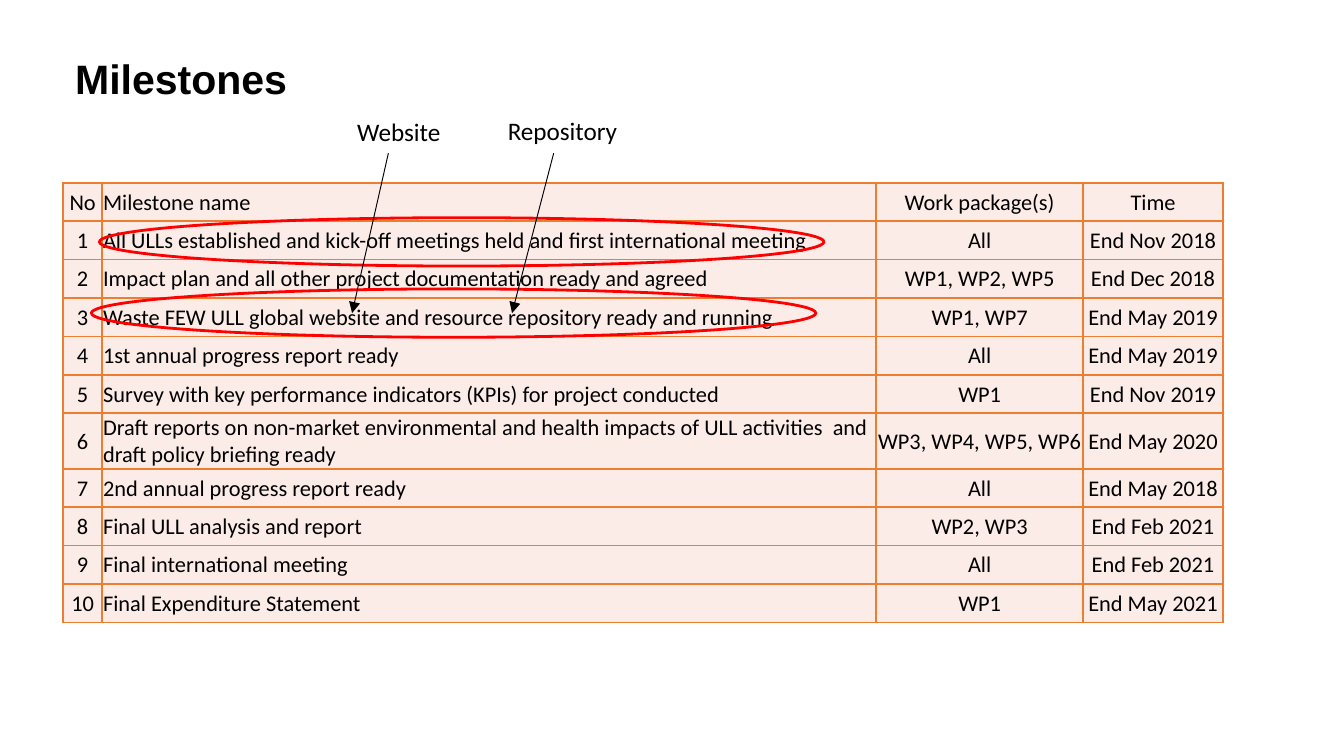
"""Build the Milestones slide: a table of milestones with two marked rows."""
from lxml import etree
from pptx import Presentation
from pptx.dml.color import RGBColor
from pptx.enum.shapes import MSO_CONNECTOR, MSO_SHAPE
from pptx.enum.text import MSO_ANCHOR, MSO_AUTO_SIZE, PP_ALIGN
from pptx.oxml import parse_xml
from pptx.oxml.ns import qn
from pptx.util import Inches, Pt

LEFT, CENTER = PP_ALIGN.LEFT, PP_ALIGN.CENTER
MIDDLE = MSO_ANCHOR.MIDDLE
OVAL = MSO_SHAPE.OVAL
STRAIGHT = MSO_CONNECTOR.STRAIGHT
FIT_SHAPE = MSO_AUTO_SIZE.SHAPE_TO_FIT_TEXT
NS = "http://schemas.openxmlformats.org/drawingml/2006/main"

SLIDE_W = 10
SLIDE_H = SLIDE_W * 9 / 16
COLS = [0.29, 5.76, 1.54, 1.04]
TABLE_X, TABLE_Y, TABLE_H = 0.47, 1.36, 3.27
TALL_ROW, TALL_H = 6, 0.41
ROWS = [
    ("No", "Milestone name", "Work package(s)", "Time"),
    ("1", "All ULLs established and kick-off meetings held and first international meeting", "All", "End Nov 2018"),
    ("2", "Impact plan and all other project documentation ready and agreed", "WP1, WP2, WP5", "End Dec 2018"),
    ("3", "Waste FEW ULL global website and resource repository ready and running", "WP1, WP7", "End May 2019"),
    ("4", "1st annual progress report ready", "All", "End May 2019"),
    ("5", "Survey with key performance indicators (KPIs) for project conducted", "WP1", "End Nov 2019"),
    ("6", "Draft reports on non-market environmental and health impacts of ULL activities  and draft policy briefing ready",
     "WP3, WP4, WP5, WP6", "End May 2020"),
    ("7", "2nd annual progress report ready", "All", "End May 2018"),
    ("8", "Final ULL analysis and report", "WP2, WP3", "End Feb 2021"),
    ("9", "Final international meeting", "All", "End Feb 2021"),
    ("10", "Final Expenditure Statement", "WP1", "End May 2021"),
]
ROW_H = (TABLE_H - TALL_H) / (len(ROWS) - 1)


def rgb(value):
    return RGBColor.from_string(value)


def add_run(p, text, size, font="Calibri", bold=False):
    r = p.add_run()
    r.text = text
    r.font.name, r.font.size, r.font.bold = font, Pt(size), bold
    r.font.color.rgb = rgb("000000")


prs = Presentation()
prs.slide_width, prs.slide_height = Inches(SLIDE_W), Inches(SLIDE_H)
s = prs.slides.add_slide(prs.slide_layouts[5])

title = s.shapes.title
title.left, title.top = Inches(0.46), Inches(0.06)
title.width, title.height = Inches(8.62), Inches(1.09)
tf = title.text_frame
tf.vertical_anchor = MIDDLE
p = tf.paragraphs[0]
p.alignment, p.line_spacing = LEFT, 0.9
add_run(p, "Milestones", 22, "Arial", True)

table = s.shapes.add_table(len(ROWS), len(COLS), Inches(TABLE_X), Inches(TABLE_Y),
                           Inches(sum(COLS)), Inches(TABLE_H)).table
for column, width in zip(table.columns, COLS):
    column.width = Inches(width)
for i, values in enumerate(ROWS):
    table.rows[i].height = Inches(TALL_H if i == TALL_ROW else ROW_H)
    for j, text in enumerate(values):
        cell = table.cell(i, j)
        cell.margin_left = cell.margin_right = cell.margin_top = Pt(0.5)
        cell.margin_bottom = 0
        cell.vertical_anchor = MIDDLE
        for side in ("lnL", "lnR", "lnT", "lnB"):
            cell._tc.get_or_add_tcPr().append(parse_xml(
                f'<a:{side} xmlns:a="{NS}" w="{Pt(1)}"><a:solidFill>'
                f'<a:srgbClr val="ED7D31"/></a:solidFill></a:{side}>'))
        cell.fill.solid()
        cell.fill.fore_color.rgb = rgb("FCECE8")
        p = cell.text_frame.paragraphs[0]
        p.alignment = LEFT if j == 1 else CENTER
        add_run(p, text, 12)

for x, y in ((0.74, 1.62), (0.68, 2.15)):
    sp = s.shapes.add_shape(OVAL, Inches(x), Inches(y), Inches(5.39), Inches(0.36))
    sp.shadow.inherit = False
    sp.fill.background()
    sp.line.color.rgb = rgb("FF0000")
    sp.line.width = Pt(1.5)

for text, x, y, width, start, end in (
    ("Repository", 3.68, 0.81, 1.09, 4.12, 3.81),
    ("Website", 2.56, 0.82, 0.87, 2.89, 2.62),
):
    tf = s.shapes.add_textbox(Inches(x), Inches(y), Inches(width), Inches(0.33)).text_frame
    tf.word_wrap, tf.auto_size = False, FIT_SHAPE
    add_run(tf.paragraphs[0], text, 13.5)
    arrow = s.shapes.add_connector(STRAIGHT, Inches(start), Inches(1.14), Inches(end), Inches(2.33))
    arrow.line.color.rgb = rgb("000000")
    arrow.line.width = Pt(0.5)
    etree.SubElement(arrow.line._get_or_add_ln(), qn("a:tailEnd"), type="triangle")
    etree.SubElement(arrow._element.spPr, qn("a:effectLst"))

prs.save("out.pptx")
